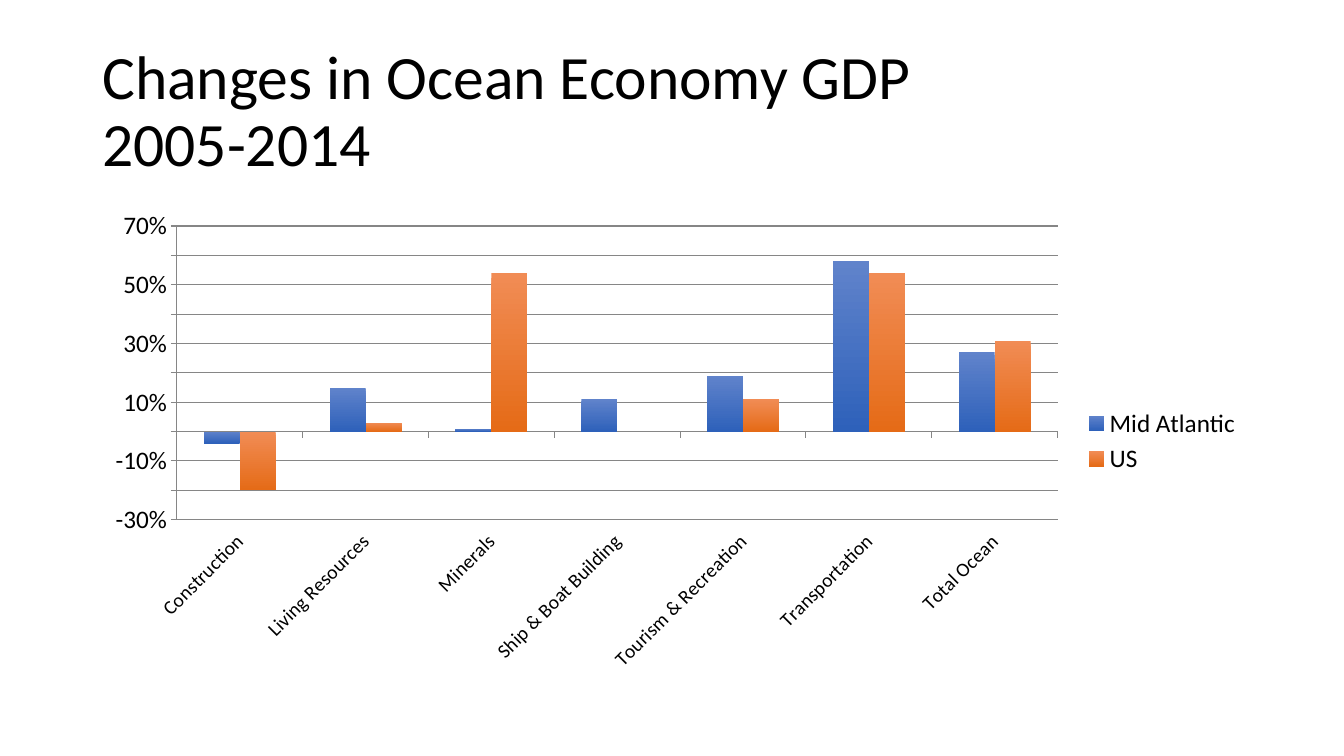
from pptx import Presentation
from pptx import util as u
from pptx.chart import data as cd
from pptx.dml.color import RGBColor
from pptx.enum import chart as ch, text as tx

FONT = "Calibri"
BLACK = RGBColor(0, 0, 0)
GREY = RGBColor(0x86, 0x86, 0x86)
BLUES = RGBColor(0x60, 0x83, 0xCB), RGBColor(0x2E, 0x61, 0xBA)
ORANGES = RGBColor(0xF1, 0x8C, 0x55), RGBColor(0xE5, 0x6B, 0x17)

SECTORS = ["Construction", "Living Resources", "Minerals",
           "Ship & Boat Building", "Tourism & Recreation",
           "Transportation", "Total Ocean"]
GROWTH = [
    ("Mid Atlantic", [-0.04, 0.15, 0.01, 0.11, 0.19, 0.58, 0.27], BLUES),
    ("US", [-0.2, 0.03, 0.54, 0, 0.11, 0.54, 0.31], ORANGES),
]


def style(font, size, color=BLACK):
    font.name, font.size = FONT, u.Pt(size)
    font.color.rgb = color


def write(slide, box, words, size=18, anchor=tx.MSO_ANCHOR.TOP, space=1.0):
    frame = slide.shapes.add_textbox(*box).text_frame
    frame.word_wrap = True
    frame.vertical_anchor = anchor
    para = frame.paragraphs[0]
    para.text = words
    para.line_spacing = space
    style(para.font, size)
    for run in para.runs:
        style(run.font, size)


def title(slide, box):
    write(slide, box, "Changes in Ocean Economy GDP\v2005-2014",
          size=44, anchor=tx.MSO_ANCHOR.MIDDLE, space=0.9)


def graph(slide, box):
    data = cd.CategoryChartData(number_format="0%")
    data.categories = SECTORS
    for name, vals, _ in GROWTH:
        data.add_series(name, vals)
    chart = slide.shapes.add_chart(
        ch.XL_CHART_TYPE.COLUMN_CLUSTERED, *box, data).chart
    style(chart.font, 18)
    chart.has_title = False

    # Legend
    chart.has_legend = True
    chart.legend.position = ch.XL_LEGEND_POSITION.RIGHT
    chart.legend.include_in_layout = False

    # Columns, shaded from top to bottom
    plot = chart.plots[0]
    plot.gap_width, plot.overlap = 150, 0
    plot.vary_by_categories = False
    for bars, (_, _, shades) in zip(plot.series, GROWTH):
        bars.invert_if_negative = False
        fill = bars.format.fill
        fill.gradient()
        fill.gradient_angle = 270
        for stop, shade in zip(fill.gradient_stops, shades):
            stop.color.rgb = shade

    # Axes
    cat, val = chart.category_axis, chart.value_axis
    for axis in (cat, val):
        axis.major_tick_mark = ch.XL_TICK_MARK.OUTSIDE
        axis.format.line.color.rgb = GREY
        axis.format.line.width = u.Pt(0.75)
    cat.tick_label_position = ch.XL_TICK_LABEL_POSITION.LOW
    style(cat.tick_labels.font, 14)
    turn = cat._element.txPr.bodyPr
    turn.set("rot", "-2700000")
    turn.set("vert", "horz")
    val.minimum_scale, val.maximum_scale, val.major_unit = -0.3, 0.7, 0.1
    val.tick_labels.number_format = "0%"
    val.tick_labels.number_format_is_linked = False
    val.has_major_gridlines = True
    val.major_gridlines.format.line.color.rgb = GREY
    val.major_gridlines.format.line.width = u.Pt(0.75)


def main():
    deck = Presentation()
    deck.slide_width, deck.slide_height = u.Cm(33.87), u.Cm(19.05)
    slide = deck.slides.add_slide(deck.slide_layouts[6])
    left, width = u.Cm(2.33), u.Cm(29.21)
    title(slide, (left, u.Cm(1.01), width, u.Cm(3.68)))
    graph(slide, (left, u.Cm(5.07), width, u.Cm(12.09)))
    deck.save("out.pptx")


if __name__ == "__main__":
    main()
